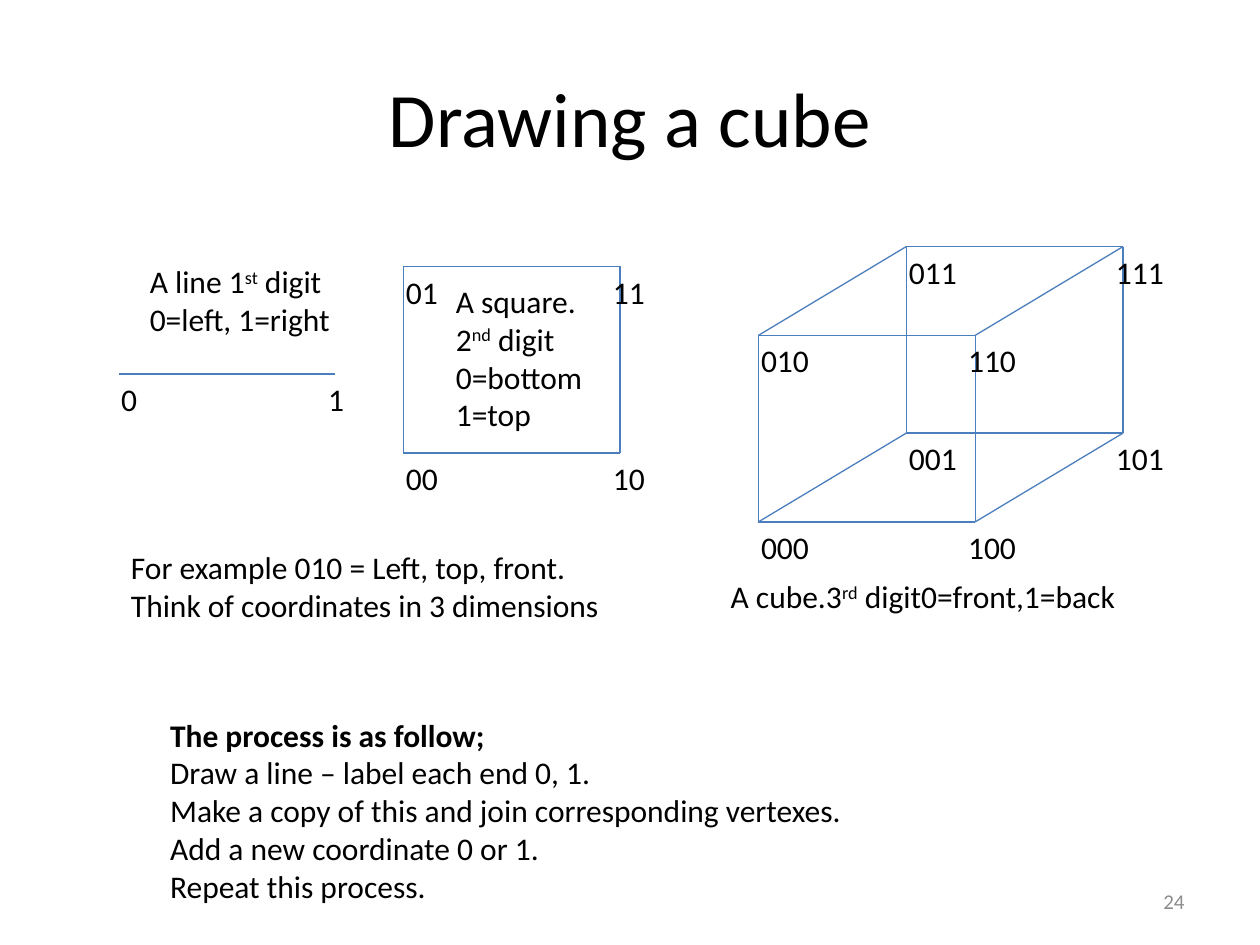
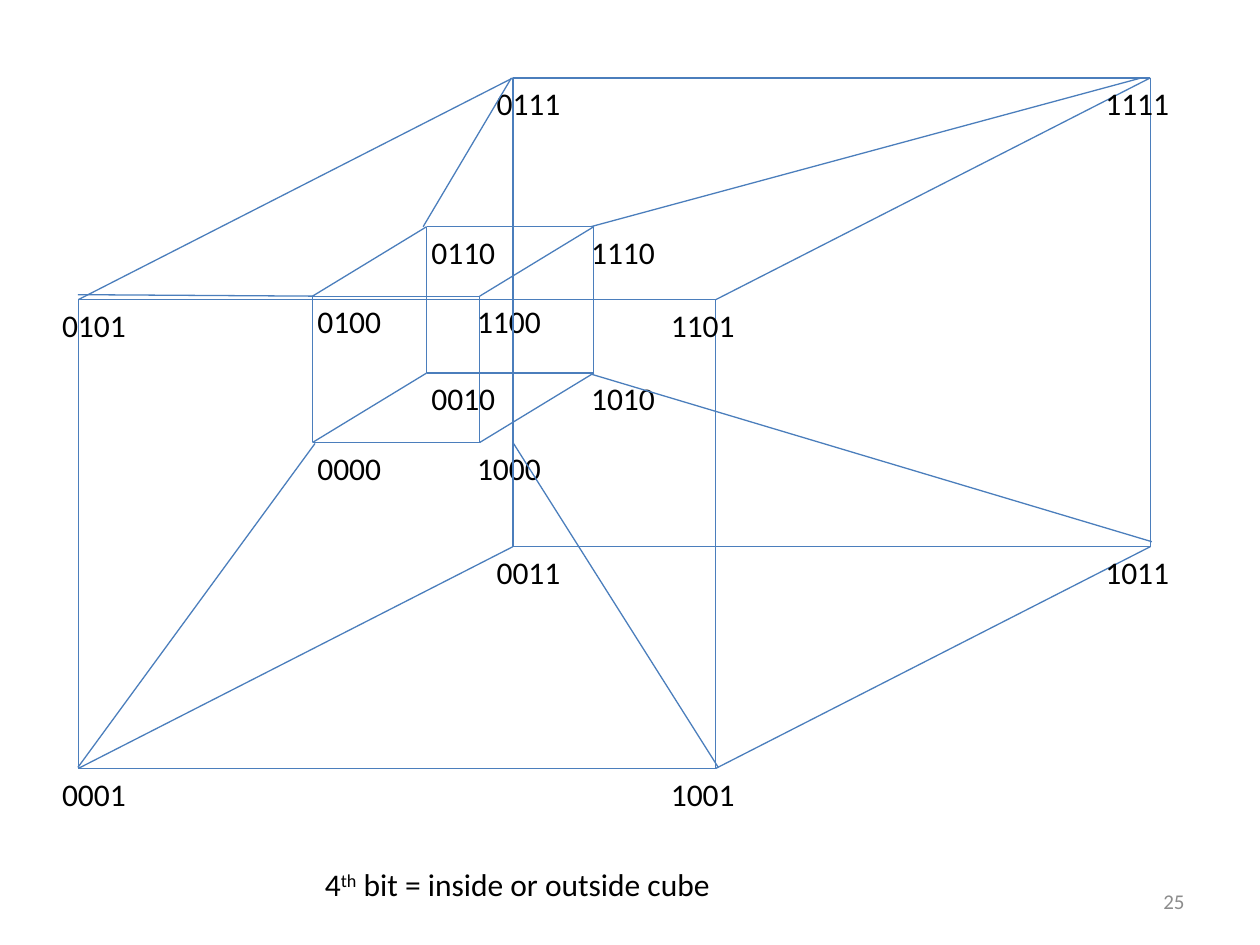
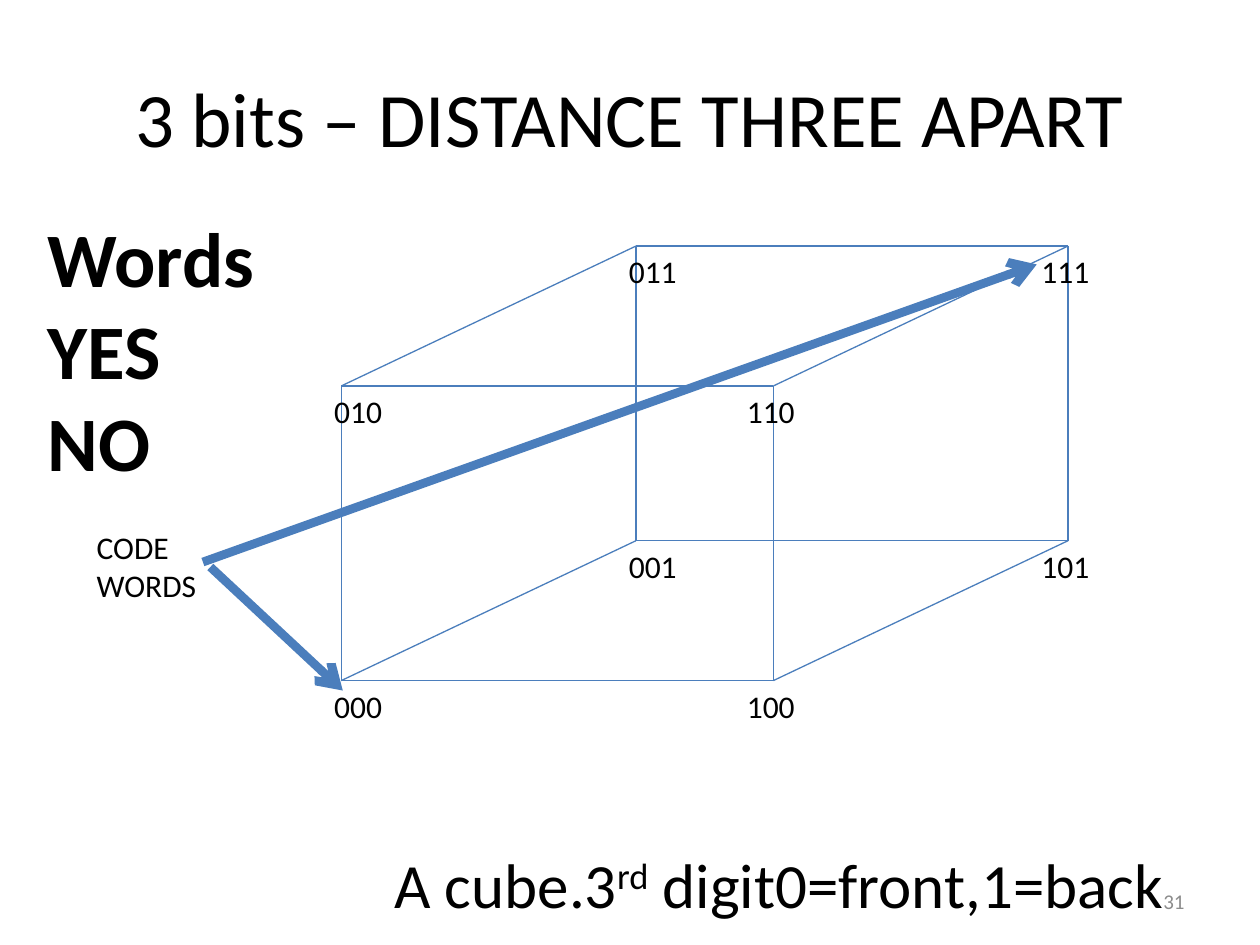
from itertools import product
from typing import NamedTuple

from pptx import Presentation
from pptx.dml.color import RGBColor
from pptx.enum.shapes import MSO_CONNECTOR as Connector
from pptx.enum.text import MSO_ANCHOR as Anchor, MSO_AUTO_SIZE as AutoSize, PP_ALIGN as Align
from pptx.oxml.ns import qn
from pptx.util import Cm, Pt

FONT = "Calibri"
BLACK, GREY, BLUE = "000000", "8C8C8C", "4B7EBC"
TITLE_ONLY, BLANK = 5, 6
LABEL_SHIFT = 0.045  # label offset as a share of the figure's width


class Run(NamedTuple):
    text: str
    bold: bool = False
    raised: bool = False


class Box(NamedTuple):
    """A text block; places and sizes are in centimetres."""
    x: float
    y: float
    w: float
    h: float
    paragraphs: list[list[Run]]
    size: float = 18


class Line(NamedTuple):
    x1: float
    y1: float
    x2: float
    y2: float
    width: float = 0.75
    arrow: bool = False


class Cube(NamedTuple):
    """A cube of any dimension: one step vector for each binary digit."""
    x: float
    y: float
    steps: list[tuple[float, float]]
    label_w: float
    label_h: float = 1.02
    suffix: str = ""

    def vertex(self, bits: tuple[int, ...]) -> tuple[float, float]:
        return (self.x + sum(b * dx for b, (dx, _) in zip(bits, self.steps)),
                self.y + sum(b * dy for b, (_, dy) in zip(bits, self.steps)))


def rgb(value: str) -> RGBColor:
    return RGBColor.from_string(value)


def add_run(p, run: Run, size: float, color: str = BLACK) -> None:
    r = p.add_run()
    r.text = run.text
    r.font.name, r.font.size, r.font.bold = FONT, Pt(size), run.bold
    r.font.color.rgb = rgb(color)
    if run.raised:
        r._r.get_or_add_rPr().set("baseline", "30000")


def add_box(shapes, box: Box) -> None:
    sp = shapes.add_textbox(Cm(box.x), Cm(box.y), Cm(box.w), Cm(box.h))
    tf = sp.text_frame
    tf.word_wrap = False
    tf.auto_size = AutoSize.SHAPE_TO_FIT_TEXT
    for i, runs in enumerate(box.paragraphs):
        p = tf.add_paragraph() if i else tf.paragraphs[0]
        for run in runs:
            add_run(p, run, box.size)


def add_line(shapes, line: Line) -> None:
    c = shapes.add_connector(Connector.STRAIGHT, Cm(line.x1), Cm(line.y1),
                             Cm(line.x2), Cm(line.y2))
    c.line.color.rgb = rgb(BLUE)
    c.line.width = Pt(line.width)
    if line.arrow:
        ln = c.line._get_or_add_ln()
        ln.append(ln.makeelement(qn("a:tailEnd"), {"type": "arrow"}))
    sp_pr = c._element.spPr
    sp_pr.append(sp_pr.makeelement(qn("a:effectLst"), {}))


def add_cube(s, cube: Cube) -> None:
    shapes = s.shapes.add_group_shape().shapes
    shift = LABEL_SHIFT * cube.steps[0][0]
    for bits in product((0, 1), repeat=len(cube.steps)):
        x, y = cube.vertex(bits)
        # An edge joins two vertices that differ in one digit
        for i, bit in enumerate(bits):
            if not bit:
                end = cube.vertex(bits[:i] + (1,) + bits[i + 1:])
                add_line(shapes, Line(x, y, *end))
        label = "".join(map(str, bits)) + cube.suffix
        add_box(shapes, Box(x - shift * (1 + bits[0]), y, cube.label_w, cube.label_h,
                            [[Run(label)]]))


def new_slide(prs, number: int, title: str = ""):
    s = prs.slides.add_slide(prs.slide_layouts[TITLE_ONLY if title else BLANK])
    if title:
        sp = s.shapes.title
        sp.left, sp.top, sp.width, sp.height = Cm(1.27), Cm(0.76), Cm(22.86), Cm(3.18)
        tf = sp.text_frame
        tf.vertical_anchor = Anchor.MIDDLE
        tf.paragraphs[0].alignment = Align.CENTER
        add_run(tf.paragraphs[0], Run(title), 44)
    # Slide number
    tf = s.shapes.add_textbox(Cm(18.2), Cm(17.65), Cm(5.93), Cm(1.02)).text_frame
    tf.word_wrap = True
    tf.vertical_anchor = Anchor.MIDDLE
    tf.paragraphs[0].alignment = Align.RIGHT
    add_run(tf.paragraphs[0], Run(str(number)), 12, GREY)
    return s


def ordinal(before: str, suffix: str, after: str) -> list[Run]:
    return [Run(before), Run(suffix, raised=True), Run(after)]


def plain(*lines: str, bold: bool = False) -> list[list[Run]]:
    return [[Run(line, bold)] for line in lines]


CUBE_CAPTION = [ordinal("A cube.3", "rd", " digit0=front,1=back")]

# Line, square and cube grow by one step vector each
RIGHT, UP, BACK = (4.37, 0), (0, -3.76), (2.98, -1.79)
GROWING_CUBES = [
    Cube(2.39, 7.54, [RIGHT], 0.84),
    Cube(8.13, 9.13, [RIGHT, UP], 1.17),
    Cube(15.29, 10.52, [RIGHT, UP, BACK], 1.5),
]
DRAWING_NOTES = [
    Box(2.77, 5.16, 4.19, 1.8,
        [ordinal("A line 1", "st", " digit"), *plain("0=left, 1=right")]),
    Box(8.94, 5.56, 3.1, 3.33,
        [*plain("A square."), ordinal("2", "nd", " digit"), *plain("0=bottom", "1=top")]),
    Box(14.48, 11.51, 8.38, 1.02, CUBE_CAPTION),
    Box(2.39, 10.92, 10.06, 1.8,
        plain("For example 010 = Left, top, front.", "Think of coordinates in 3 dimensions")),
    Box(3.18, 14.3, 14.35, 4.11,
        plain("The process is as follow;", bold=True)
        + plain("Draw a line – label each end 0, 1.",
                "Make a copy of this and join corresponding vertexes.",
                "Add a new coordinate 0 or 1.",
                "Repeat this process.")),
]

# Four dimensions: a cube inside a cube
NESTED_CUBES = [
    Cube(6.3, 8.92, [(3.37, 0), (0, -2.95), (2.3, -1.4)], 1.93, suffix="0"),
    Cube(1.58, 15.49, [(12.85, 0), (0, -9.45), (8.76, -4.47)], 1.93, suffix="1"),
]
INNER_TO_OUTER = [
    Line(1.57, 15.47, 6.35, 8.94),
    Line(1.57, 5.94, 6.35, 5.97),
    Line(10.31, 1.57, 8.53, 4.57),
    Line(11.91, 4.57, 23.01, 1.57),
    Line(10.34, 8.92, 14.48, 15.47),
    Line(11.91, 7.54, 23.22, 10.92),
]
FOURTH_BIT_NOTE = Box(6.3, 17.32, 8.43, 1.02,
                      [ordinal("4", "th", " bit = inside or outside cube")])

# Code words at opposite corners
CODE_CUBE = Cube(6.88, 13.72, [(8.71, 0), (0, -5.94), (5.94, -2.82)], 2.97, 1.63)
CODE_ARROWS = [
    Line(4.09, 11.33, 20.9, 5.33, 5, True),
    Line(4.24, 11.43, 6.91, 13.92, 5, True),
]
CODE_NOTES = [
    Box(7.7, 16.92, 16.26, 1.8, CUBE_CAPTION, 36),
    Box(1.7, 10.52, 2.54, 1.8, plain("CODE", "WORDS")),
    Box(0.71, 4.11, 4.72, 5.89, plain("Words", "YES", "NO", bold=True), 44),
]


def main() -> None:
    prs = Presentation()
    prs.slide_width, prs.slide_height = Cm(25.4), Cm(19.05)

    s = new_slide(prs, 24, "Drawing a cube")
    for cube in GROWING_CUBES:
        add_cube(s, cube)
    for box in DRAWING_NOTES:
        add_box(s.shapes, box)

    s = new_slide(prs, 25)
    for cube in NESTED_CUBES:
        add_cube(s, cube)
    for line in INNER_TO_OUTER:
        add_line(s.shapes, line)
    add_box(s.shapes, FOURTH_BIT_NOTE)

    s = new_slide(prs, 31, "3 bits – DISTANCE THREE APART")
    add_cube(s, CODE_CUBE)
    for line in CODE_ARROWS:
        add_line(s.shapes, line)
    for box in CODE_NOTES:
        add_box(s.shapes, box)

    prs.save("out.pptx")


if __name__ == "__main__":
    main()
